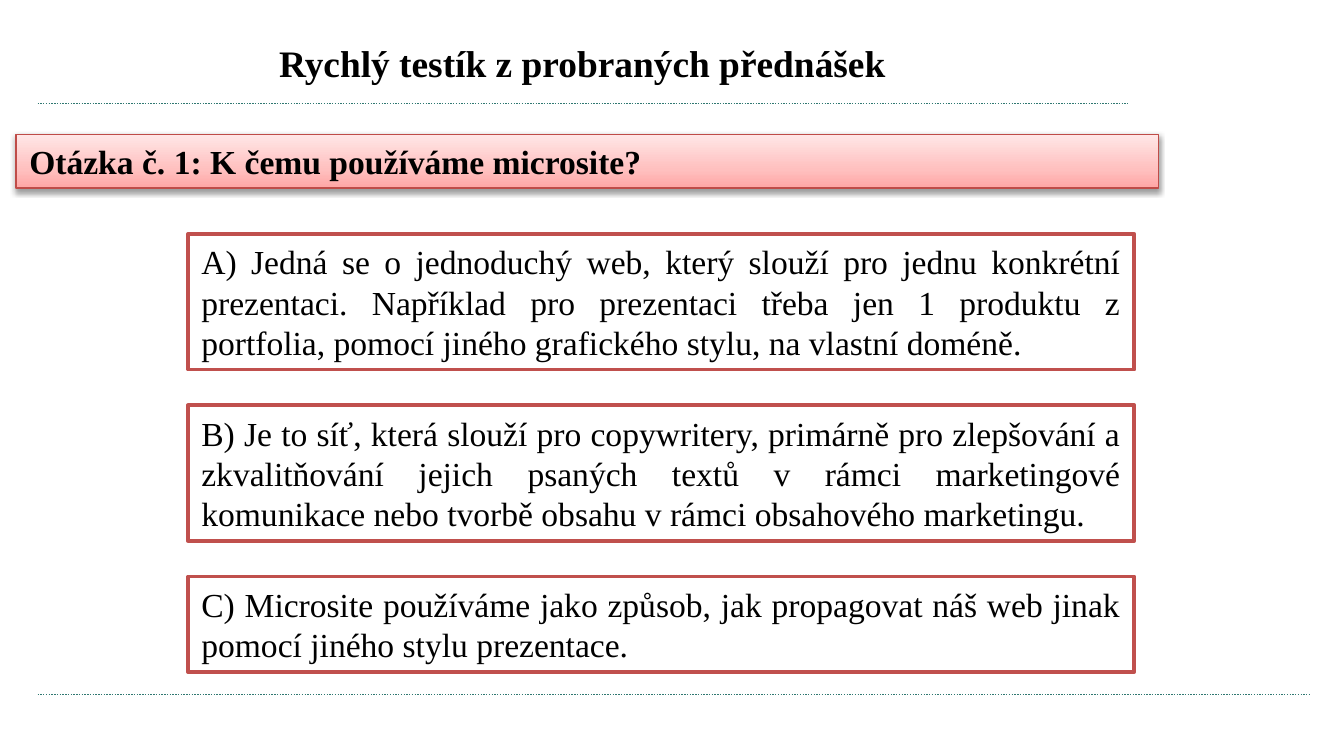
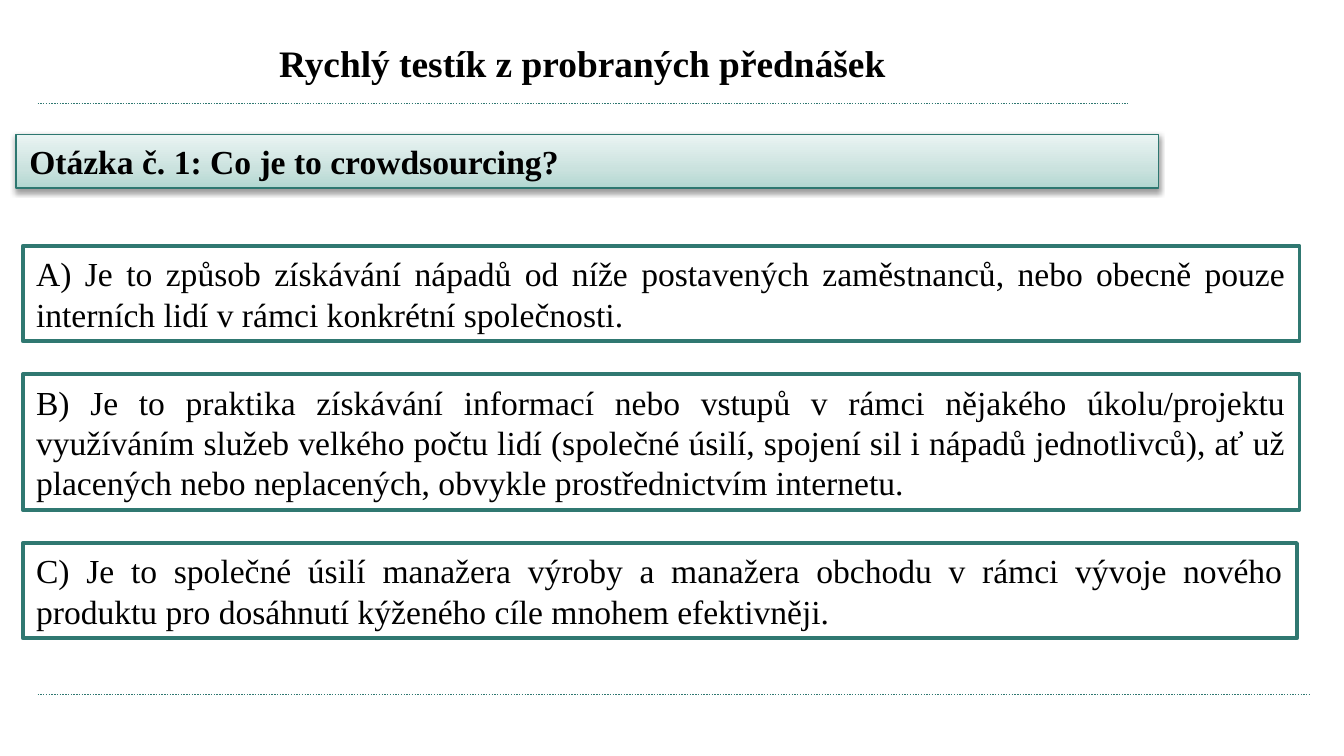
"""Build two quiz slides, each with a question band and three framed answers."""
from dataclasses import dataclass

import pptx
import pptx.dml.color
import pptx.enum.dml
import pptx.enum.shapes
import pptx.enum.text
import pptx.oxml
import pptx.oxml.ns
import pptx.util

PX = 4572
ALIGN = pptx.enum.text.PP_ALIGN
TITLE = "Rychlý testík z probraných přednášek"


@dataclass(frozen=True)
class Theme:
    """Colours and type sizes shared by all slides."""
    font: str = "Times New Roman"
    title_size: int = 20
    body_size: int = 18
    text: str = "000000"
    paper: str = "FFFFFF"
    green: str = "307871"
    green_edge: str = "2D7770"
    green_fade: tuple[str, str, str] = ("B2D7D1", "CAE2DE", "EAF4F3")
    red: str = "C0504D"
    red_edge: str = "BF4C48"
    red_fade: tuple[str, str, str] = ("FFA6A5", "FFC0BF", "FFE7E7")
    hairline: float = 0.75
    frame: float = 2


@dataclass(frozen=True)
class Box:
    """A rectangle in px."""
    left: int
    top: int
    width: int
    height: int

    def emu(self) -> list[int]:
        """Return the rectangle in EMU."""
        return [v * PX for v in (self.left, self.top, self.width, self.height)]


@dataclass(frozen=True)
class Answer:
    """One answer with its line count and frame width."""
    text: str
    lines: int
    width: int


@dataclass(frozen=True)
class Quiz:
    """One question with its answers, placement and colours."""
    question: str
    answers: tuple[Answer, ...]
    left: int
    top: int
    gap: int
    frame: str
    edge: str
    fade: tuple[str, str, str]


THEME = Theme()
LINE_HEIGHT = {2: 142, 3: 202}
QUIZZES = (
    Quiz(
        "Otázka č. 1: K čemu používáme microsite?",
        (
            Answer("A) Jedná se o jednoduchý web, který slouží pro jednu konkrétní "
                   "prezentaci. Například pro prezentaci třeba jen 1 produktu "
                   "z portfolia, pomocí jiného grafického stylu, na vlastní doméně.",
                   3, 1408),
            Answer("B) Je to síť, která slouží pro copywritery, primárně pro zlepšování "
                   "a zkvalitňování jejich psaných textů v rámci marketingové "
                   "komunikace nebo tvorbě obsahu v rámci obsahového marketingu.",
                   3, 1408),
            Answer("C) Microsite používáme jako způsob, jak propagovat náš web jinak "
                   "pomocí jiného stylu prezentace.", 2, 1408),
        ),
        280, 348, 53, THEME.red, THEME.red_edge, THEME.red_fade,
    ),
    Quiz(
        "Otázka č. 1: Co je to crowdsourcing?",
        (
            Answer("A) Je to způsob získávání nápadů od níže postavených zaměstnanců, "
                   "nebo obecně pouze interních lidí v rámci konkrétní společnosti.",
                   2, 1900),
            Answer("B) Je to praktika získávání informací nebo vstupů v rámci nějakého "
                   "úkolu/projektu využíváním služeb velkého počtu lidí (společné "
                   "úsilí, spojení sil i nápadů jednotlivců), ať už placených nebo "
                   "neplacených, obvykle prostřednictvím internetu.", 3, 1900),
            Answer("C) Je to společné úsilí manažera výroby a manažera obchodu v rámci "
                   "vývoje nového produktu pro dosáhnutí kýženého cíle mnohem "
                   "efektivněji.", 2, 1896),
        ),
        34, 366, 49, THEME.green, THEME.green_edge, THEME.green_fade,
    ),
)


def rgb(value: str) -> pptx.dml.color.RGBColor:
    """Turn a hex string into a colour."""
    return pptx.dml.color.RGBColor.from_string(value)


def xml(body: str):
    """Read one drawing element, given with the a: prefix."""
    tag, rest = body[1:].split(">", 1)
    return pptx.oxml.parse_xml(f"<{tag} {pptx.oxml.ns.nsdecls('a')}>{rest}")


def write(sp, text: str, size: int, align: ALIGN, bold: bool = False) -> None:
    """Set and format the single paragraph of a shape."""
    tf = sp.text_frame
    tf.word_wrap = True
    tf.vertical_anchor = pptx.enum.text.MSO_ANCHOR.MIDDLE
    tf.text = text
    p = tf.paragraphs[0]
    p.alignment = align
    font = p.runs[0].font
    font.name = THEME.font
    font.size = pptx.util.Pt(size)
    font.bold = bold
    font.color.rgb = rgb(THEME.text)


def add_rule(s, left: int, right: int, y: int) -> None:
    """Draw a dotted horizontal rule."""
    cn = s.shapes.add_connector(pptx.enum.shapes.MSO_CONNECTOR.STRAIGHT,
                                left * PX, y * PX, right * PX, y * PX)
    cn.line.color.rgb = rgb(THEME.green)
    cn.line.width = pptx.util.Pt(THEME.hairline)
    cn.line.dash_style = pptx.enum.dml.MSO_LINE.ROUND_DOT
    cn._element.spPr.append(xml("<a:effectLst></a:effectLst>"))


def add_rect(s, box: Box, edge: str, width: float):
    """Draw a white rectangle with an edge and no shadow."""
    sp = s.shapes.add_shape(pptx.enum.shapes.MSO_SHAPE.RECTANGLE, *box.emu())
    sp.shadow.inherit = False
    sp.fill.solid()
    sp.fill.fore_color.rgb = rgb(THEME.paper)
    sp.line.color.rgb = rgb(edge)
    sp.line.width = pptx.util.Pt(width)
    return sp


def add_band(s, quiz: Quiz) -> None:
    """Draw the shaded question band."""
    sp = add_rect(s, Box(24, 200, 1700, 80), quiz.edge, THEME.hairline)
    stops = "".join(f'<a:gs pos="{pos * 1000}"><a:srgbClr val="{color}"/></a:gs>'
                    for pos, color in zip((0, 35, 100), quiz.fade))
    spPr = sp._element.spPr
    solid = spPr.find(pptx.oxml.ns.qn("a:solidFill"))
    spPr.replace(solid, xml(f"<a:gradFill><a:gsLst>{stops}</a:gsLst>"
                            '<a:lin ang="16200000" scaled="0"/></a:gradFill>'))
    spPr.find(pptx.oxml.ns.qn("a:effectLst")).append(
        xml('<a:outerShdw blurRad="40000" dist="20000" dir="5400000" rotWithShape="0">'
            '<a:srgbClr val="000000"><a:alpha val="38000"/></a:srgbClr></a:outerShdw>'))
    write(sp, quiz.question, THEME.body_size, ALIGN.LEFT, bold=True)


def add_answers(s, quiz: Quiz) -> None:
    """Stack the framed answers with equal gaps."""
    top = quiz.top
    for answer in quiz.answers:
        height = LINE_HEIGHT[answer.lines]
        sp = add_rect(s, Box(quiz.left, top, answer.width, height), quiz.frame, THEME.frame)
        write(sp, answer.text, THEME.body_size, ALIGN.JUSTIFY)
        top += height + quiz.gap


def add_quiz(prs, quiz: Quiz) -> None:
    """Add one complete quiz slide."""
    s = prs.slides.add_slide(prs.slide_layouts[6])
    add_rule(s, 56, 1678, 154)
    add_rule(s, 56, 1950, 1034)
    title = s.shapes.add_textbox(*Box(56, 42, 1622, 102).emu())
    write(title, TITLE, THEME.title_size, ALIGN.CENTER, bold=True)
    add_band(s, quiz)
    add_answers(s, quiz)


def main() -> None:
    """Build and save the presentation."""
    prs = pptx.Presentation()
    prs.slide_width = 2000 * PX
    prs.slide_height = 1125 * PX
    for quiz in QUIZZES:
        add_quiz(prs, quiz)
    prs.save("out.pptx")


if __name__ == "__main__":
    main()
